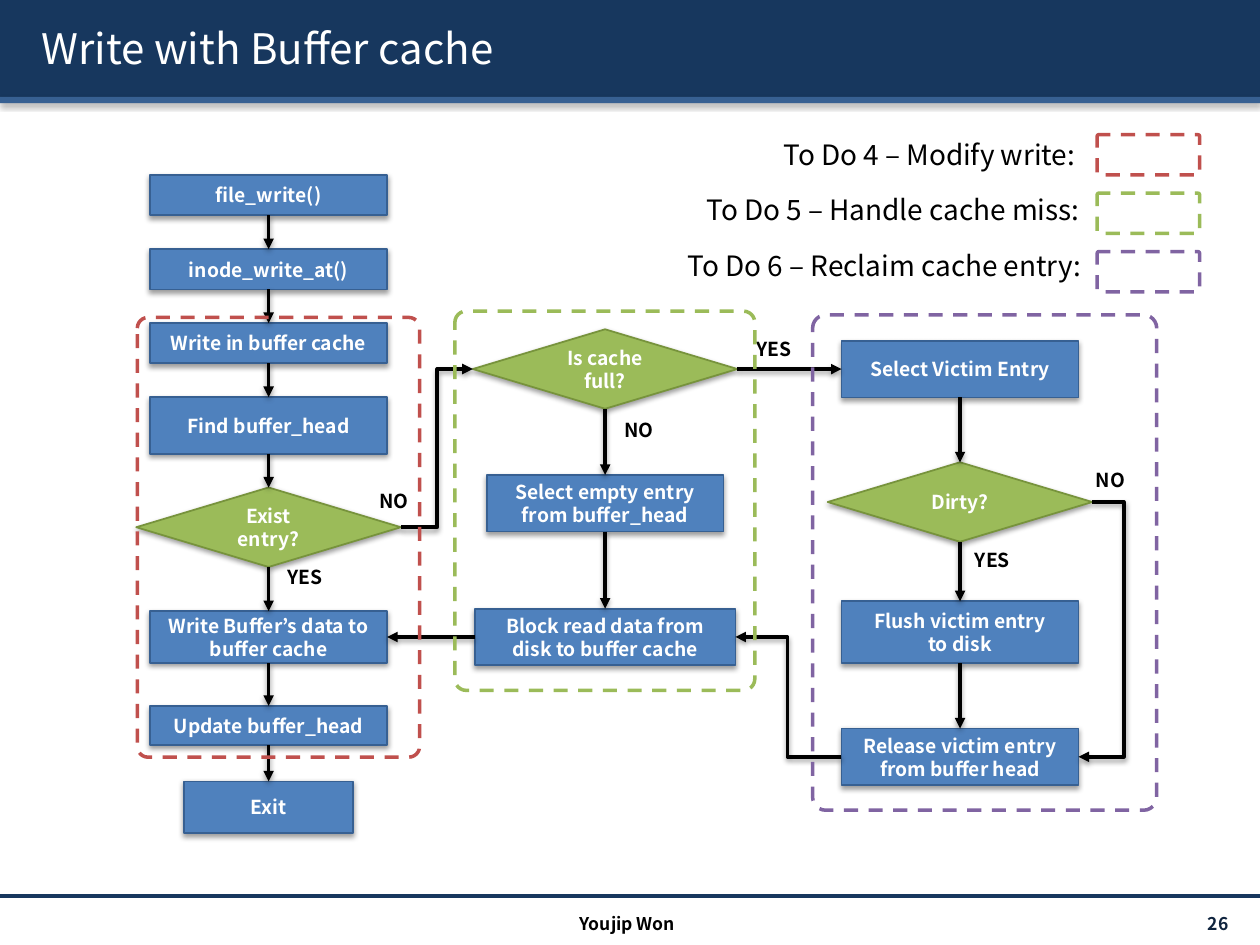
from dataclasses import dataclass

from lxml import etree
from pptx import Presentation
from pptx import util as u
from pptx.dml.color import RGBColor
from pptx.enum import dml, shapes, text
from pptx.oxml import ns

TOP, LEFT, BOTTOM, RIGHT = range(4)
KIND = shapes.MSO_SHAPE
ALIGN = text.PP_ALIGN
ANCHOR = text.MSO_ANCHOR


@dataclass(frozen=True)
class Theme:
    font: str = "Noto Sans CJK KR"
    navy: str = "17375E"
    edge_blue: str = "376092"
    step_blue: str = "4F81BD"
    green: str = "9BBB59"
    edge_green: str = "77933C"
    red: str = "C0504D"
    purple: str = "8064A2"
    page_number: str = "0F243E"
    black: str = "000000"
    white: str = "FFFFFF"
    title_size: int = 24
    legend_size: int = 16
    step_size: int = 11
    footer_size: int = 10


THEME = Theme()


def rgb(value):
    return RGBColor.from_string(value)


def add_element(parent, tag, **attributes):
    return etree.SubElement(parent, ns.qn(tag), attributes)


def fill_shadow(effects, blur=3.1, distance=1.6, direction="5400000", alpha="38000"):
    """Put a black outer shadow into an effect list."""
    outer = add_element(effects, "a:outerShdw", blurRad=str(u.Pt(blur)),
                        dist=str(u.Pt(distance)), dir=direction, rotWithShape="0")
    color = add_element(outer, "a:srgbClr", val=THEME.black)
    add_element(color, "a:alpha", val=alpha)


def cast_shadow(item):
    """Shadow a shape or connector whose line is already set."""
    fill_shadow(add_element(item._element.spPr, "a:effectLst"))


def write(frame, words, *, size=THEME.step_size, color=THEME.white, bold=True,
          align=ALIGN.CENTER, anchor=ANCHOR.MIDDLE, wrap=True):
    frame.word_wrap = wrap
    frame.vertical_anchor = anchor
    frame.text = words
    for paragraph in frame.paragraphs:
        paragraph.alignment = align
        for run in paragraph.runs:
            run.font.name = THEME.font
            run.font.size = u.Pt(size)
            run.font.bold = bold
            run.font.color.rgb = rgb(color)


def text_box(slide, words, left, top, width, height, **text_format):
    box = slide.shapes.add_textbox(*map(u.Pt, (left, top, width, height)))
    write(box.text_frame, words, **text_format)
    return box


def band(slide, top, height, color):
    bar = slide.shapes.add_shape(KIND.RECTANGLE, 0, u.Pt(top), u.Pt(720), u.Pt(height))
    bar.fill.solid()
    bar.fill.fore_color.rgb = rgb(color)
    bar.line.fill.background()
    cast_shadow(bar)


def node(slide, words, center, top, width, height, kind, fill, edge):
    """Flowchart node placed by its horizontal centre."""
    block = slide.shapes.add_shape(
        kind, *map(u.Pt, (center - width / 2, top, width, height)))
    block.fill.solid()
    block.fill.fore_color.rgb = rgb(fill)
    block.line.color.rgb = rgb(edge)
    block.line.width = u.Pt(1)
    cast_shadow(block)
    write(block.text_frame, words)
    return block


def step(slide, words, center, top, height, width=135.4):
    return node(slide, words, center, top, width, height,
                KIND.RECTANGLE, THEME.step_blue, THEME.edge_blue)


def decision(slide, words, center, top):
    return node(slide, words, center, top, 151.2, 45.4,
                KIND.DIAMOND, THEME.green, THEME.edge_green)


def arrow(slide, source, target, leave=BOTTOM, enter=TOP, turn=None):
    """Join two nodes; turn is the x of the upright part of an elbow."""
    style = shapes.MSO_CONNECTOR.STRAIGHT if turn is None else shapes.MSO_CONNECTOR.ELBOW
    link = slide.shapes.add_connector(style, 0, 0, 0, 0)
    link.begin_connect(source, leave)
    link.end_connect(target, enter)
    if turn is not None:
        ratio = (u.Pt(turn) - link.begin_x) / (link.end_x - link.begin_x)
        guides = link._element.spPr.find(ns.qn("a:prstGeom")).find(ns.qn("a:avLst"))
        add_element(guides, "a:gd", name="adj1", fmla=f"val {round(ratio * 100000)}")
    link.line.color.rgb = rgb(THEME.black)
    link.line.width = u.Pt(2)
    add_element(link.line._get_or_add_ln(), "a:tailEnd", type="triangle")
    cast_shadow(link)


def dashed_frame(slide, left, top, width, height, color):
    outline = slide.shapes.add_shape(
        KIND.ROUNDED_RECTANGLE, *map(u.Pt, (left, top, width, height)))
    outline.adjustments[0] = 0.038
    outline.fill.background()
    outline.line.color.rgb = rgb(color)
    outline.line.width = u.Pt(2)
    outline.line.dash_style = dml.MSO_LINE.DASH
    outline.shadow.inherit = False


def master_parts(slide):
    band(slide, 0, 55.4, THEME.navy)
    band(slide, 55.4, 3.6, THEME.edge_blue)
    rule = slide.shapes.add_connector(
        shapes.MSO_CONNECTOR.STRAIGHT, 0, u.Pt(512), u.Pt(720), u.Pt(512))
    rule.line.color.rgb = rgb(THEME.navy)
    rule.line.width = u.Pt(2)
    add_element(rule._element.spPr, "a:effectLst")

    title = text_box(slide, "Write with Buffer cache", 16.6, 4.3, 692, 46,
                     size=THEME.title_size, bold=False, align=ALIGN.LEFT)
    run_format = title.text_frame.paragraphs[0].runs[0].font._element
    effects = etree.Element(ns.qn("a:effectLst"))
    run_format.find(ns.qn("a:solidFill")).addnext(effects)
    fill_shadow(effects, blur=0, distance=1.5, direction="2700000", alpha="100000")

    text_box(slide, "26", 627, 519, 82, 17.3, size=THEME.footer_size,
             color=THEME.page_number, align=ALIGN.RIGHT)
    text_box(slide, "Youjip Won", 239, 518.4, 239, 17.3, size=THEME.footer_size,
             color=THEME.black, anchor=ANCHOR.TOP)


def flowchart(slide):
    write_x, miss_x, reclaim_x = 153.5, 345.8, 548.6

    file_write = step(slide, "file_write()", write_x, 100, 23)
    inode_write = step(slide, "inode_write_at()", write_x, 142.4, 23)
    cache_write = step(slide, "Write in buffer cache", write_x, 184.6, 23)
    find_head = step(slide, "Find buffer_head", write_x, 226.9, 32.4)
    exists = decision(slide, "Exist entry?", write_x, 278.6)
    write_data = step(slide, "Write Buffer’s data to buffer cache", write_x, 349.25, 29.5)
    update_head = step(slide, "Update buffer_head", write_x, 403.4, 22.3)
    leave = step(slide, "Exit", write_x, 446.5, 29.5, width=96.6)

    full = decision(slide, "Is cache full?", miss_x, 188.2)
    select_empty = step(slide, "Select empty entry from buffer_head", miss_x, 271.4, 32.4)
    block_read = step(slide, "Block read data from disk to buffer cache",
                      miss_x, 347.8, 32.4, width=149)

    select_victim = step(slide, "Select Victim Entry", reclaim_x, 194.7, 32.4)
    dirty = decision(slide, "Dirty?", reclaim_x, 264.2)
    flush = step(slide, "Flush victim entry\nto disk", reclaim_x, 343.6, 35.3)
    release = step(slide, "Release victim entry\nfrom buffer head", reclaim_x, 416.3, 32.4)

    columns = (
        (file_write, inode_write, cache_write, find_head, exists,
         write_data, update_head, leave),
        (full, select_empty, block_read),
        (select_victim, dirty, flush, release),
    )
    for column in columns:
        for source, target in zip(column, column[1:]):
            arrow(slide, source, target)
    arrow(slide, full, select_victim, RIGHT, LEFT)
    arrow(slide, block_read, write_data, LEFT, RIGHT)
    arrow(slide, exists, full, RIGHT, LEFT, turn=249.9)
    arrow(slide, release, block_read, LEFT, RIGHT, turn=450)
    arrow(slide, dirty, release, RIGHT, RIGHT, turn=642.2)

    answers = (("YES", 154, 319.7), ("NO", 205, 275.8), ("NO", 345, 235.4),
               ("YES", 422, 189.4), ("YES", 547, 309.6), ("NO", 614.5, 264.2))
    for answer, left, top in answers:
        text_box(slide, answer, left, top, 40.3, 23, color=THEME.black, anchor=ANCHOR.TOP)


def to_do_groups(slide):
    """Legend entries with the frame that each one stands for."""
    groups = (
        ("To Do 4 – Modify write:", 440.6, THEME.red, (78.5, 181.4, 161.3, 251.3)),
        ("To Do 5 – Handle cache miss:", 396.7, THEME.green, (259.9, 177.8, 171.4, 216.7)),
        ("To Do 6 – Reclaim cache entry:", 386, THEME.purple, (464.4, 180, 196.6, 283)),
    )
    for row, (caption, left, color, area) in enumerate(groups):
        text_box(slide, caption, left, 74.9 + 31.7 * row, 630 - left, 26.6,
                 size=THEME.legend_size, color=THEME.black, bold=False,
                 align=ALIGN.LEFT, anchor=ANCHOR.TOP, wrap=False)
        dashed_frame(slide, 627, 77 + 33.4 * row, 58.5, 23, color)
        dashed_frame(slide, *area, color)


def main():
    deck = Presentation()
    deck.slide_width, deck.slide_height = u.Pt(720), u.Pt(540)
    slide = deck.slides.add_slide(deck.slide_layouts[6])
    master_parts(slide)
    flowchart(slide)
    to_do_groups(slide)
    deck.save("out.pptx")


if __name__ == "__main__":
    main()
